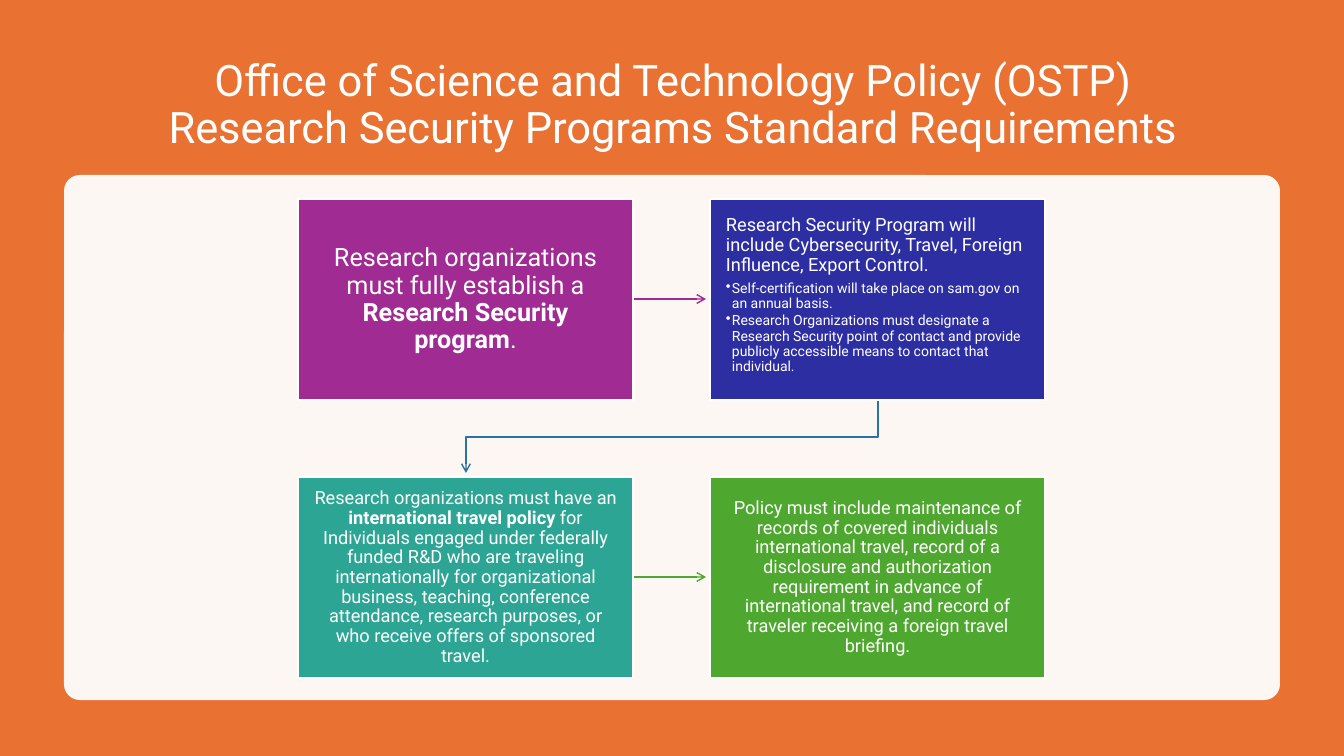
from typing import NamedTuple

from lxml import etree
from pptx import Presentation
from pptx import util as u
from pptx.dml import color
from pptx.enum import shapes, text
from pptx.oxml import ns

PX = 914400 / 100.8
FONT = "Roboto"
COLORS = {
    "orange": "E97132",
    "white": "FFFFFF",
    "purple": "A02B93",
    "indigo": "2C2EA2",
    "blue": "2C71A4",
    "teal": "2DA594",
    "green": "4EA72E",
}
BOX_LEFT, BOX_TOP = 298, 199
BOX_W, BOX_H = 335, 201
PITCH_X, PITCH_Y = 412, 278
ARROW_GAP = 4


class Step(NamedTuple):
    col: int
    row: int
    fill: str
    size: int
    runs: list[tuple[str, bool]]
    bullets: tuple[str, ...] = ()


class Arrow(NamedTuple):
    color: str
    points: list[tuple[int, int]]


STEPS = [
    Step(0, 0, "purple", 18, [
        ("Research organizations must fully establish a ", False),
        ("Research Security program", True),
        (".", False),
    ]),
    Step(1, 0, "indigo", 13, [
        ("Research Security Program will include Cybersecurity, Travel, "
         "Foreign Influence, Export Control.", False),
    ], (
        "Self-certification will take place on sam.gov on an annual basis.",
        "Research Organizations must designate a Research Security point of contact "
        "and provide publicly accessible means to contact that individual.",
    )),
    Step(0, 1, "teal", 13, [
        ("Research organizations must have an ", False),
        ("international travel policy ", True),
        ("for Individuals engaged under federally funded R&D who are traveling "
         "internationally for organizational business, teaching, conference attendance, "
         "research purposes, or who receive offers of sponsored travel.", False),
    ]),
    Step(1, 1, "green", 13, [
        ("Policy must include maintenance of records of covered individuals "
         "international travel, record of a disclosure and authorization requirement "
         "in advance of international travel, and record of traveler receiving a "
         "foreign travel briefing.", False),
    ]),
]


def px(n: int) -> u.Emu:
    return u.Emu(round(n * PX))


def rgb(name: str) -> color.RGBColor:
    return color.RGBColor.from_string(COLORS[name])


def add_block(s, kind, box: tuple[int, int, int, int], fill: str):
    sp = s.shapes.add_shape(kind, *map(px, box))
    sp.shadow.inherit = False
    sp.fill.solid()
    sp.fill.fore_color.rgb = rgb(fill)
    sp.line.fill.background()
    return sp


def format_paragraph(p, size: int, after: float, align) -> None:
    p.alignment = align
    p.line_spacing = 0.9
    p.space_after = u.Pt(after)
    for r in p.runs:
        r.font.size = u.Pt(size)
        r.font.name = FONT
        r.font.color.rgb = rgb("white")


def add_bullet(p, indent: int) -> None:
    ppr = p._p.get_or_add_pPr()
    ppr.set("marL", str(px(indent)))
    ppr.set("indent", str(-px(indent)))
    etree.SubElement(ppr, ns.qn("a:buChar")).set("char", "•")


def add_title(s) -> None:
    sp = s.shapes.add_textbox(px(93), px(50), px(1159), px(111))
    tf = sp.text_frame
    tf.word_wrap = True
    tf.vertical_anchor = text.MSO_ANCHOR.MIDDLE
    tf.text = ("Office of Science and Technology Policy (OSTP)\v"
               "Research Security Programs Standard Requirements")
    format_paragraph(tf.paragraphs[0], 31, 0, text.PP_ALIGN.CENTER)


def add_panel(s) -> None:
    sp = add_block(s, shapes.MSO_SHAPE.ROUNDED_RECTANGLE, (64, 175, 1216, 525), "white")
    sp.adjustments[0] = 0.03
    clr = sp.fill._xPr.find(ns.qn("a:solidFill"))[0]
    etree.SubElement(clr, ns.qn("a:alpha")).set("val", "95000")


def add_step(s, step: Step) -> None:
    left = BOX_LEFT + step.col * PITCH_X
    top = BOX_TOP + step.row * PITCH_Y
    sp = add_block(s, shapes.MSO_SHAPE.RECTANGLE, (left, top, BOX_W, BOX_H), step.fill)
    sp.line.color.rgb = rgb("white")
    sp.line.width = u.Pt(1.5)
    tf = sp.text_frame
    tf.word_wrap = True
    tf.margin_left = tf.margin_right = px(16)
    tf.margin_top = tf.margin_bottom = px(17)
    anchor, align = text.MSO_ANCHOR.MIDDLE, text.PP_ALIGN.CENTER
    if step.bullets:
        anchor, align = text.MSO_ANCHOR.TOP, text.PP_ALIGN.LEFT
    tf.vertical_anchor = anchor
    p = tf.paragraphs[0]
    for words, bold in step.runs:
        r = p.add_run()
        r.text = words
        r.font.bold = bold
    format_paragraph(p, step.size, 0.35 * step.size, align)
    for words in step.bullets:
        p = tf.add_paragraph()
        p.text = words
        add_bullet(p, 6)
        format_paragraph(p, 10, 1.5, align)


def add_arrow(s, arrow: Arrow) -> None:
    """Draw a straight connector, or an open outline when the route has bends."""
    points = [(px(x), px(y)) for x, y in arrow.points]
    if len(points) == 2:
        sp = s.shapes.add_connector(shapes.MSO_CONNECTOR.STRAIGHT, *points[0], *points[1])
    else:
        route = s.shapes.build_freeform(*points[0])
        route.add_line_segments(points[1:], close=False)
        sp = route.convert_to_shape()
        sp.fill.background()
    sp.line.color.rgb = rgb(arrow.color)
    sp.line.width = u.Pt(1)
    etree.SubElement(sp.line._get_or_add_ln(), ns.qn("a:tailEnd")).set("type", "arrow")
    etree.SubElement(sp._element.spPr, ns.qn("a:effectLst"))


def flow_arrows() -> list[Arrow]:
    start, end = BOX_LEFT + BOX_W, BOX_LEFT + PITCH_X - ARROW_GAP
    across = [
        Arrow(name, [(start, y), (end, y)])
        for row, name in enumerate(("purple", "green"))
        for y in [BOX_TOP + row * PITCH_Y + BOX_H // 2]
    ]
    left_mid = BOX_LEFT + BOX_W // 2 + 1
    right_mid = left_mid + PITCH_X
    top, bottom = BOX_TOP + BOX_H, BOX_TOP + PITCH_Y - ARROW_GAP
    bend = (top + bottom) // 2 + 1
    down = Arrow("blue", [(right_mid, top), (right_mid, bend),
                          (left_mid, bend), (left_mid, bottom)])
    return [*across, down]


def main() -> None:
    prs = Presentation()
    prs.slide_width, prs.slide_height = px(1344), px(756)
    s = prs.slides.add_slide(prs.slide_layouts[6])
    add_block(s, shapes.MSO_SHAPE.RECTANGLE, (0, 0, 1344, 756), "orange")
    add_title(s)
    add_panel(s)
    for arrow in flow_arrows():
        add_arrow(s, arrow)
    for step in STEPS:
        add_step(s, step)
    prs.save("out.pptx")


if __name__ == "__main__":
    main()
